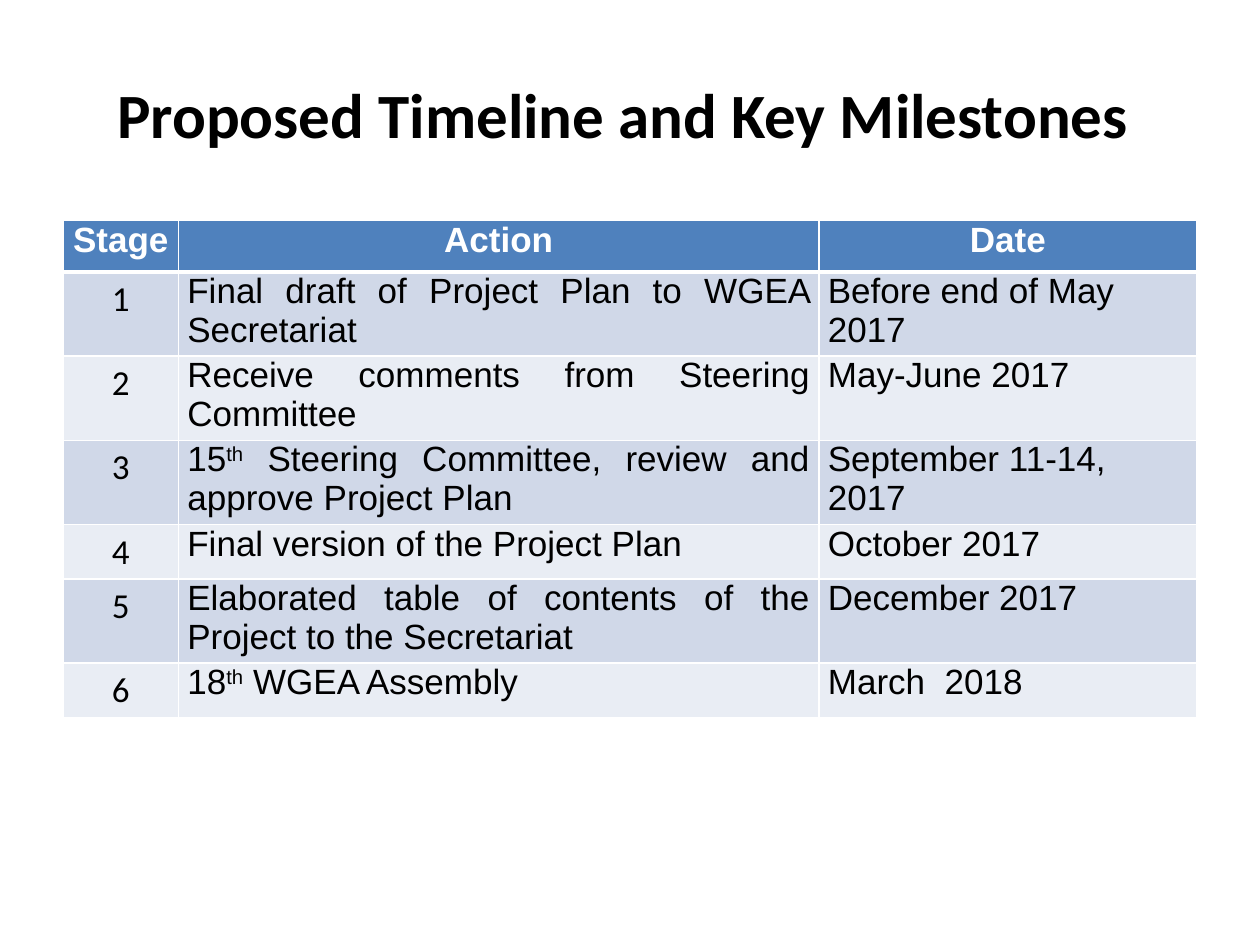
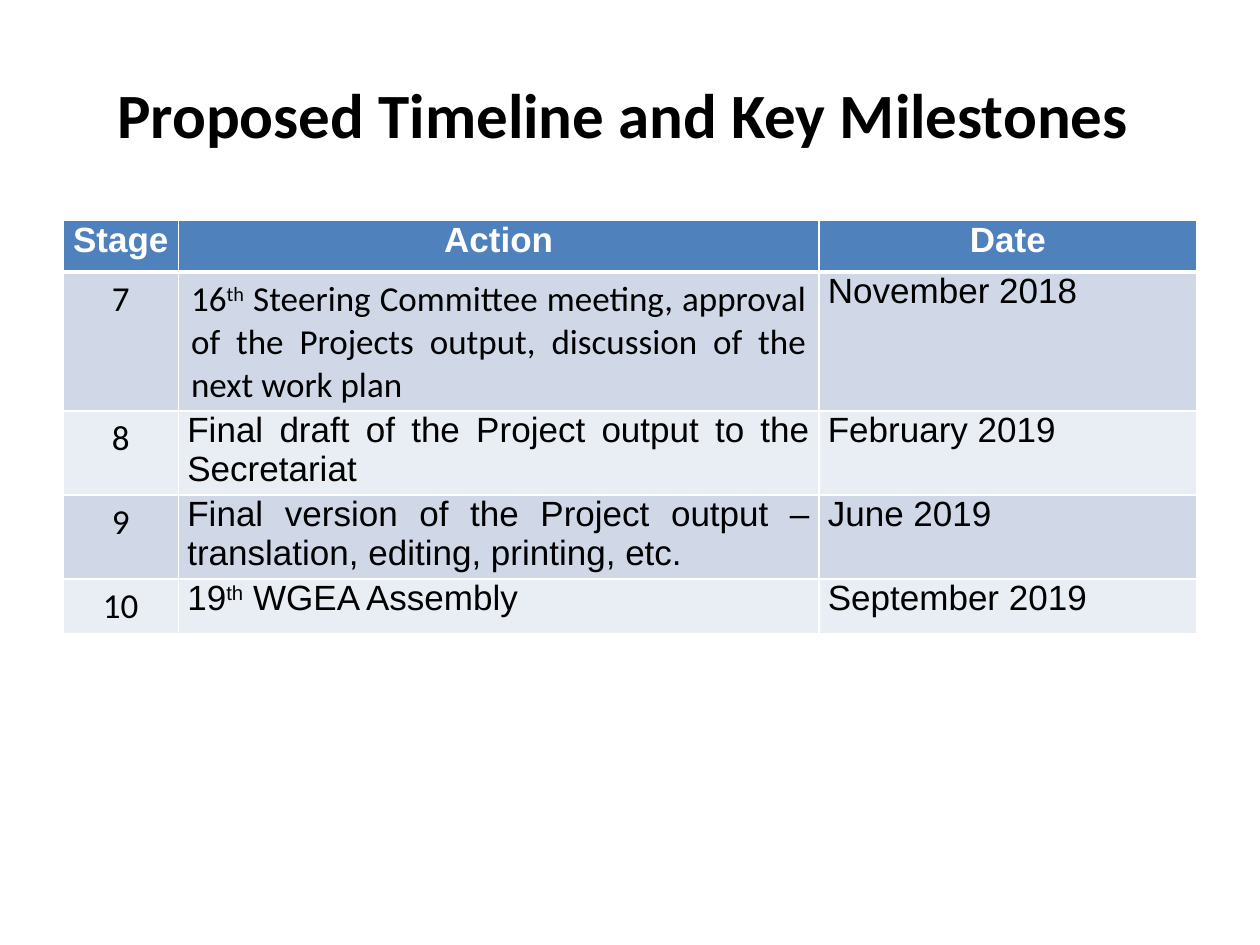
from dataclasses import dataclass

from lxml import etree
from pptx import Presentation
from pptx.dml.color import RGBColor
from pptx.enum.text import MSO_ANCHOR, PP_ALIGN
from pptx.oxml.ns import qn
from pptx.slide import Slide
from pptx.table import _Cell
from pptx.text.text import _Paragraph
from pptx.util import Pt

CENTER, JUSTIFY, LEFT = PP_ALIGN.CENTER, PP_ALIGN.JUSTIFY, PP_ALIGN.LEFT
MIDDLE = MSO_ANCHOR.MIDDLE

BLACK = RGBColor(0x00, 0x00, 0x00)
WHITE = RGBColor(0xFF, 0xFF, 0xFF)
HEADER_BLUE = RGBColor(0x4F, 0x81, 0xBD)
BANDS = (RGBColor(0xD0, 0xD8, 0xE8), RGBColor(0xE9, 0xED, 0xF4))

TITLE = "Proposed Timeline and Key Milestones"
HEADINGS = ("Stage", "Action", "Date")
COLUMN_WIDTHS = (66, 366, 216)
ROW_HEIGHT = 29.5
THIN, THICK = 1, 3


@dataclass(frozen=True)
class CellStyle:
    font: str
    align: PP_ALIGN
    color: RGBColor = BLACK
    bold: bool = False
    side_margin: float = 5.1
    end_margin: float = 0


HEADING_STYLE = CellStyle("Arial", CENTER, WHITE, bold=True)
STAGE_STYLE = CellStyle("Calibri", CENTER, side_margin=7.2, end_margin=3.6)
ACTION_STYLE = CellStyle("Arial", JUSTIFY)
ROOMY_ACTION_STYLE = CellStyle("Calibri", JUSTIFY, side_margin=7.2, end_margin=3.6)
DATE_STYLE = CellStyle("Arial", LEFT)


@dataclass(frozen=True)
class Milestone:
    stage: int
    action: str  # text between carets is superscript
    date: str
    action_style: CellStyle = ACTION_STYLE


TIMELINE = (
    (
        Milestone(1, "Final draft of Project Plan to WGEA Secretariat", "Before end of May 2017"),
        Milestone(2, "Receive comments from Steering Committee", "May-June 2017"),
        Milestone(3, "15^th^ Steering Committee, review and approve Project Plan",
                  "September 11-14, 2017"),
        Milestone(4, "Final version of the Project Plan", "October 2017"),
        Milestone(5, "Elaborated table of contents of the Project to the Secretariat",
                  "December 2017"),
        Milestone(6, "18^th^ WGEA Assembly", "March  2018"),
    ),
    (
        Milestone(7, "16^th^ Steering Committee meeting, approval of the Projects output, "
                     "discussion of the next work plan", "November 2018", ROOMY_ACTION_STYLE),
        Milestone(8, "Final draft of the Project output to the Secretariat", "February 2019"),
        Milestone(9, "Final version of the Project output – translation, editing, printing, etc.",
                  "June 2019"),
        Milestone(10, "19^th^ WGEA Assembly", "September 2019"),
    ),
)


def add_runs(paragraph: _Paragraph, text: str, font: str, size: float,
             color: RGBColor, bold: bool) -> None:
    """Add text run by run, raising every part enclosed in carets."""
    for index, part in enumerate(text.split("^")):
        run = paragraph.add_run()
        run.text = part
        run.font.name = font
        run.font.size = Pt(size)
        run.font.color.rgb = color
        run.font.bold = bold
        if index % 2:
            run.font._element.set("baseline", "30000")


def set_borders(cell: _Cell, top: float, bottom: float) -> None:
    properties = cell._tc.get_or_add_tcPr()
    widths = {"a:lnL": THIN, "a:lnR": THIN, "a:lnT": top, "a:lnB": bottom}
    for index, (side, width) in enumerate(widths.items()):
        line = etree.Element(qn(side), w=str(Pt(width)))
        fill = etree.SubElement(line, qn("a:solidFill"))
        etree.SubElement(fill, qn("a:srgbClr"), val=str(WHITE))
        properties.insert(index, line)


def fill_cell(cell: _Cell, text: str, style: CellStyle, band: RGBColor) -> None:
    cell.margin_left = cell.margin_right = Pt(style.side_margin)
    cell.margin_top = cell.margin_bottom = Pt(style.end_margin)
    cell.fill.solid()
    cell.fill.fore_color.rgb = band
    paragraph = cell.text_frame.paragraphs[0]
    paragraph.alignment = style.align
    add_runs(paragraph, text, style.font, 20, style.color, style.bold)


def add_title(slide: Slide) -> None:
    frame = slide.shapes.add_textbox(Pt(32), Pt(20), Pt(648), Pt(90)).text_frame
    frame.word_wrap = True
    frame.vertical_anchor = MIDDLE
    paragraph = frame.paragraphs[0]
    paragraph.alignment = CENTER
    add_runs(paragraph, TITLE, "Calibri", 36, BLACK, True)


def add_timeline(slide: Slide, milestones: tuple[Milestone, ...]) -> None:
    row_count = len(milestones) + 1
    table = slide.shapes.add_table(row_count, len(HEADINGS), Pt(36), Pt(126),
                                   Pt(sum(COLUMN_WIDTHS)), Pt(ROW_HEIGHT * row_count)).table
    for column, width in zip(table.columns, COLUMN_WIDTHS):
        column.width = Pt(width)

    rows = [[(heading, HEADING_STYLE) for heading in HEADINGS]]
    rows += [[(str(m.stage), STAGE_STYLE), (m.action, m.action_style), (m.date, DATE_STYLE)]
             for m in milestones]
    for row_index, row in enumerate(rows):
        table.rows[row_index].height = Pt(ROW_HEIGHT)
        band = BANDS[(row_index - 1) % 2] if row_index else HEADER_BLUE
        for column_index, (text, style) in enumerate(row):
            cell = table.cell(row_index, column_index)
            fill_cell(cell, text, style, band)
            set_borders(cell, top=THICK if row_index == 1 else THIN,
                        bottom=THICK if row_index == 0 else THIN)


def main() -> None:
    presentation = Presentation()
    presentation.slide_width, presentation.slide_height = Pt(720), Pt(540)
    blank_layout = presentation.slide_layouts[6]
    for milestones in TIMELINE:
        slide = presentation.slides.add_slide(blank_layout)
        add_title(slide)
        add_timeline(slide, milestones)
    presentation.save("out.pptx")


if __name__ == "__main__":
    main()
